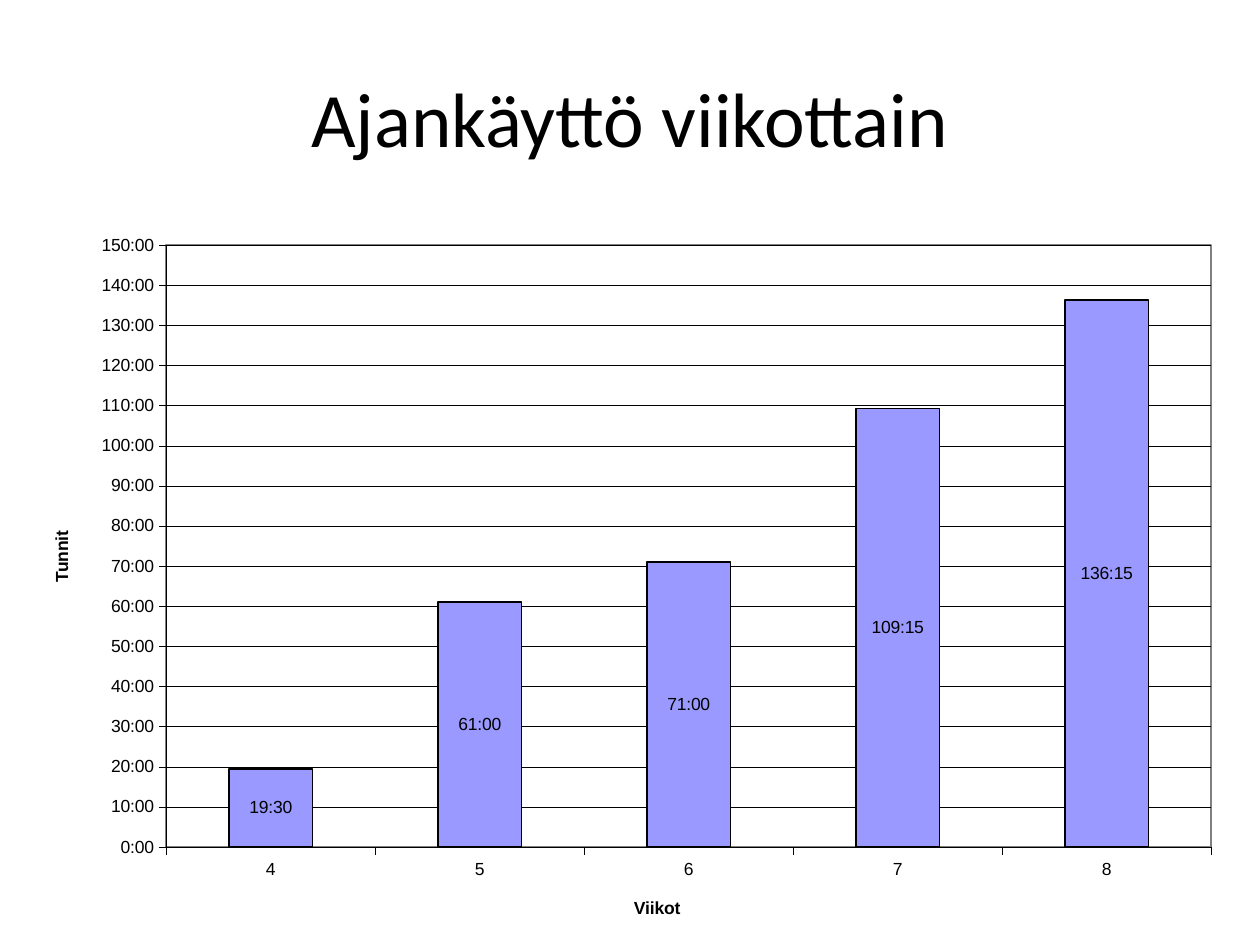
from math import ceil

from pptx import Presentation
from pptx.chart.data import CategoryChartData
from pptx.dml.color import RGBColor
from pptx.enum.chart import XL_CHART_TYPE as ChartType
from pptx.enum.chart import XL_LABEL_POSITION as LabelPosition
from pptx.enum.chart import XL_TICK_MARK as TickMark
from pptx.enum.text import MSO_ANCHOR, PP_ALIGN
from pptx.oxml import parse_xml
from pptx.oxml.ns import nsdecls, qn
from pptx.util import Inches, Pt

COLORS = {"ink": "000000", "bar": "9999FF", "frame": "808080"}
HOURS_BY_WEEK = {"4": 19.5, "5": 61, "6": 71, "7": 109.25, "8": 136.25}
HOURS_PER_DAY = 24
TIME_FORMAT = "[h]:mm"


def color(name):
    """Return a palette entry as an RGB colour."""
    return RGBColor.from_string(COLORS[name])


def to_days(hours):
    """Turn hours into days, rounded up to four decimals so no minute is lost."""
    return ceil(hours / HOURS_PER_DAY * 10000) / 10000


def style_font(font, name, size, bold=False):
    """Set the face, size, weight and ink colour of a font."""
    font.name, font.size, font.bold = name, Pt(size), bold
    font.color.rgb = color("ink")


def style_line(line, width):
    """Draw a solid ink line of the given width in points."""
    line.color.rgb = color("ink")
    line.width = Pt(width)


def add_title(slide, text):
    """Place and format the slide title."""
    title = slide.shapes.title
    title.left, title.top = Inches(0.5), Inches(0.3)
    title.width, title.height = Inches(9), Inches(1.25)
    title.text_frame.vertical_anchor = MSO_ANCHOR.MIDDLE
    paragraph = title.text_frame.paragraphs[0]
    paragraph.alignment = PP_ALIGN.CENTER
    run = paragraph.add_run()
    run.text = text
    style_font(run.font, "Calibri", 44)


def set_layout(element, index, target="", **fractions):
    """Give a chart part a manual layout in fractions of the chart."""
    for layout in element.findall(qn("c:layout")):
        element.remove(layout)
    modes = '<c:xMode val="edge"/><c:yMode val="edge"/>'
    sizes = "".join(f'<c:{key} val="{value}"/>' for key, value in fractions.items())
    element.insert(index, parse_xml(
        f'<c:layout {nsdecls("c")}><c:manualLayout>{target}{modes}{sizes}'
        "</c:manualLayout></c:layout>"))


def style_plot_area(chart):
    """Position the plot area and outline it."""
    plot_area = chart.element.find(".//" + qn("c:plotArea"))
    set_layout(plot_area, 0, '<c:layoutTarget val="inner"/>',
               x=0.1165, y=0.034, w=0.863, h=0.831)
    plot_area.append(parse_xml(
        f'<c:spPr {nsdecls("c", "a")}><a:noFill/><a:ln w="12700"><a:solidFill>'
        f'<a:srgbClr val="{COLORS["frame"]}"/></a:solidFill></a:ln></c:spPr>'))


def style_axis(axis, title, x, y):
    """Format an axis and put its title at the given chart fractions."""
    axis.major_tick_mark = TickMark.OUTSIDE
    axis.minor_tick_mark = TickMark.NONE
    style_font(axis.tick_labels.font, "Arial", 10)
    style_line(axis.format.line, 0.25)
    run = axis.axis_title.text_frame.paragraphs[0].add_run()
    run.text = title
    style_font(run.font, "Arial", 10, bold=True)
    set_layout(axis.axis_title.element, 1, x=x, y=y)


def style_value_scale(axis):
    """Scale the value axis from 0 to 150 hours in steps of ten."""
    axis.minimum_scale = 0
    axis.maximum_scale = 150 / HOURS_PER_DAY
    axis.major_unit = 10 / HOURS_PER_DAY
    axis.has_major_gridlines = True
    style_line(axis.major_gridlines.format.line, 0.25)
    axis.tick_labels.number_format = TIME_FORMAT
    axis.tick_labels.number_format_is_linked = False


def style_bars(plot):
    """Format the weekly bars and their labels."""
    plot.gap_width, plot.overlap = 150, 100
    plot.vary_by_categories = False
    series = plot.series[0]
    series.format.fill.solid()
    series.format.fill.fore_color.rgb = color("bar")
    style_line(series.format.line, 1)
    labels = series.data_labels
    labels.show_value = True
    labels.number_format = TIME_FORMAT
    labels.number_format_is_linked = False
    labels.position = LabelPosition.CENTER
    style_font(labels.font, "Arial", 10)


def add_hours_chart(slide):
    """Add the column chart of hours per week."""
    data = CategoryChartData(number_format=TIME_FORMAT)
    data.categories = list(HOURS_BY_WEEK)
    data.add_series("Series 1", [to_days(hours) for hours in HOURS_BY_WEEK.values()])
    chart = slide.shapes.add_chart(
        ChartType.COLUMN_STACKED, Inches(0.2), Inches(1.75),
        Inches(9.61), Inches(5.75), data).chart
    chart.has_legend = chart.has_title = False
    style_font(chart.font, "Arial", 10)
    style_axis(chart.category_axis, "Viikot", 0.5, 0.929)
    style_axis(chart.value_axis, "Tunnit", 0.018, 0.424)
    style_value_scale(chart.value_axis)
    style_bars(chart.plots[0])
    style_plot_area(chart)


def main():
    """Build and save the presentation."""
    presentation = Presentation()
    presentation.slide_width, presentation.slide_height = Inches(10), Inches(7.5)
    slide = presentation.slides.add_slide(presentation.slide_layouts[5])
    add_title(slide, "Ajankäyttö viikottain")
    add_hours_chart(slide)
    presentation.save("out.pptx")


if __name__ == "__main__":
    main()
